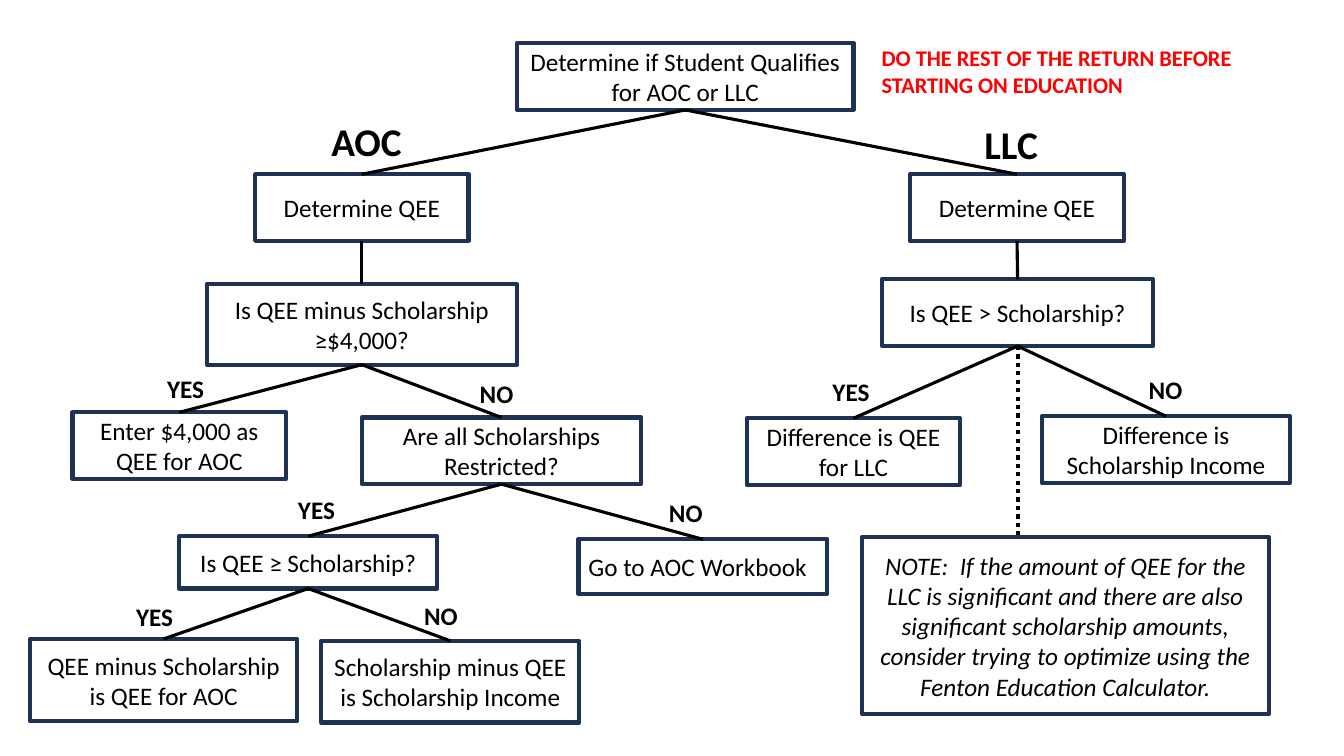
from dataclasses import dataclass

from lxml import etree
from pptx import Presentation
from pptx.dml.color import RGBColor
from pptx.enum.dml import MSO_LINE
from pptx.enum.shapes import MSO_CONNECTOR, MSO_SHAPE
from pptx.enum.text import MSO_ANCHOR, PP_ALIGN
from pptx.oxml.ns import qn
from pptx.util import Cm, Pt

RECTANGLE = MSO_SHAPE.RECTANGLE
STRAIGHT = MSO_CONNECTOR.STRAIGHT
DOTTED = MSO_LINE.ROUND_DOT
MIDDLE = MSO_ANCHOR.MIDDLE
LEFT, CENTER = PP_ALIGN.LEFT, PP_ALIGN.CENTER
TOP_SITE, BOTTOM_SITE = 0, 2


@dataclass(frozen=True)
class Theme:
    font: str = "Calibri"
    text: RGBColor = RGBColor(0x00, 0x00, 0x00)
    warning: RGBColor = RGBColor(0xFF, 0x00, 0x00)
    border: RGBColor = RGBColor(0x1E, 0x32, 0x56)
    body_size: Pt = Pt(18)
    branch_size: Pt = Pt(28)
    warning_size: Pt = Pt(16)
    border_width: Pt = Pt(3)
    link_width: Pt = Pt(2.25)


THEME = Theme()

# Boxes: name -> (text, left, top, width, height) in centimetres
BOXES = {
    "qualifies": ("Determine if Student Qualifies for AOC or LLC", 13.03, 1.09, 8.48, 1.68),
    "aoc_qee": ("Determine QEE", 6.43, 4.39, 5.38, 1.68),
    "llc_qee": ("Determine QEE", 22.94, 4.39, 5.38, 1.68),
    "aoc_test": ("Is QEE minus Scholarship ≥$4,000?", 5.21, 7.16, 7.82, 2.03),
    "llc_test": ("Is QEE > Scholarship?", 22.23, 7.04, 6.83, 1.68),
    "enter_4000": ("Enter $4,000 as QEE for AOC", 1.83, 10.39, 5.38, 1.68),
    "restricted": ("Are all Scholarships Restricted?", 9.12, 10.52, 7.04, 1.68),
    "llc_difference": ("Difference is QEE for LLC", 18.82, 10.54, 5.38, 1.68),
    "llc_income": ("Difference is Scholarship Income", 26.26, 10.49, 6.25, 1.68),
    "covers": ("Is QEE ≥ Scholarship?", 4.52, 13.51, 6.5, 1.32),
    "workbook": ("Go to AOC Workbook", 14.58, 13.59, 6.27, 1.37),
    "aoc_difference": ("QEE minus Scholarship is QEE for AOC", 0.76, 16.1, 6.73, 2.08),
    "aoc_income": ("Scholarship minus QEE is Scholarship Income", 8.1, 16.15, 6.5, 2.06),
    "note": (
        "NOTE:  If the amount of QEE for the LLC is significant and there are also "
        "significant scholarship amounts, consider trying to optimize using the "
        "Fenton Education Calculator.",
        21.72, 13.54, 10.26, 4.45,
    ),
}

# Links: parent box -> child boxes
LINKS = {
    "qualifies": ("aoc_qee", "llc_qee"),
    "aoc_qee": ("aoc_test",),
    "llc_qee": ("llc_test",),
    "aoc_test": ("enter_4000", "restricted"),
    "llc_test": ("llc_difference", "llc_income"),
    "restricted": ("covers", "workbook"),
    "covers": ("aoc_difference", "aoc_income"),
}

# Answers: (text, left, top) in centimetres
ANSWERS = [
    ("YES", 3.96, 9.27), ("NO", 11.84, 9.42),
    ("YES", 20.73, 9.35), ("NO", 28.7, 9.3),
    ("YES", 7.26, 12.34), ("NO", 16.61, 12.4),
    ("YES", 3.18, 15.04), ("NO", 10.44, 15.01),
]
BRANCHES = [("AOC", 8.1, 2.82), ("LLC", 24.56, 2.9)]


def write_text(shape, text, size, color=THEME.text, align=LEFT, bold=False, italic=False):
    frame = shape.text_frame
    frame.word_wrap = True
    paragraph = frame.paragraphs[0]
    paragraph.text = text
    paragraph.alignment = align
    font = paragraph.font
    font.name, font.size, font.color.rgb = THEME.font, size, color
    font.bold, font.italic = bold, italic


def add_box(slide, text, left, top, width, height, align=CENTER, italic=False):
    shape = slide.shapes.add_shape(RECTANGLE, Cm(left), Cm(top), Cm(width), Cm(height))
    shape.shadow.inherit = False
    shape.fill.background()
    shape.line.color.rgb = THEME.border
    shape.line.width = THEME.border_width
    frame = shape.text_frame
    frame.vertical_anchor = MIDDLE
    frame.margin_top = frame.margin_bottom = 0
    write_text(shape, text, THEME.body_size, align=align, italic=italic)
    return shape


def add_label(slide, text, left, top, width, height, size, color=THEME.text):
    label = slide.shapes.add_textbox(Cm(left), Cm(top), Cm(width), Cm(height))
    write_text(label, text, size, color, bold=True)


def add_line(slide, width, start=(0, 0), end=(0, 0)):
    line = slide.shapes.add_connector(STRAIGHT, *start, *end)
    line.line.color.rgb = THEME.text
    line.line.width = width
    etree.SubElement(line._element.spPr, qn("a:effectLst"))
    return line


def add_link(slide, parent, child):
    link = add_line(slide, THEME.link_width)
    link.begin_connect(parent, BOTTOM_SITE)
    link.end_connect(child, TOP_SITE)


def add_note_line(slide, question, note):
    # Drops straight down from the question to the note's top edge
    middle = question.left + question.width // 2
    start = (middle, question.top + question.height)
    line = add_line(slide, THEME.border_width, start, (middle, note.top))
    line.line.dash_style = DOTTED


def main():
    presentation = Presentation()
    presentation.slide_width, presentation.slide_height = Cm(33.87), Cm(19.05)
    slide = presentation.slides.add_slide(presentation.slide_layouts[6])

    # Decision boxes
    boxes = {
        name: add_box(slide, *content,
                      align=LEFT if name == "workbook" else CENTER,
                      italic=name == "note")
        for name, content in BOXES.items()
    }

    # Connecting lines
    for parent, children in LINKS.items():
        for child in children:
            add_link(slide, boxes[parent], boxes[child])
    add_note_line(slide, boxes["llc_test"], boxes["note"])

    # Branch names, answers and warning
    for text, left, top in BRANCHES:
        add_label(slide, text, left, top, 3, 1.45, THEME.branch_size)
    for text, left, top in ANSWERS:
        add_label(slide, text, left, top, 2.2, 1.02, THEME.body_size)
    add_label(slide, "DO THE REST OF THE RETURN BEFORE STARTING ON EDUCATION",
              21.97, 0.99, 11.35, 1.63, THEME.warning_size, THEME.warning)

    presentation.save("out.pptx")


if __name__ == "__main__":
    main()
